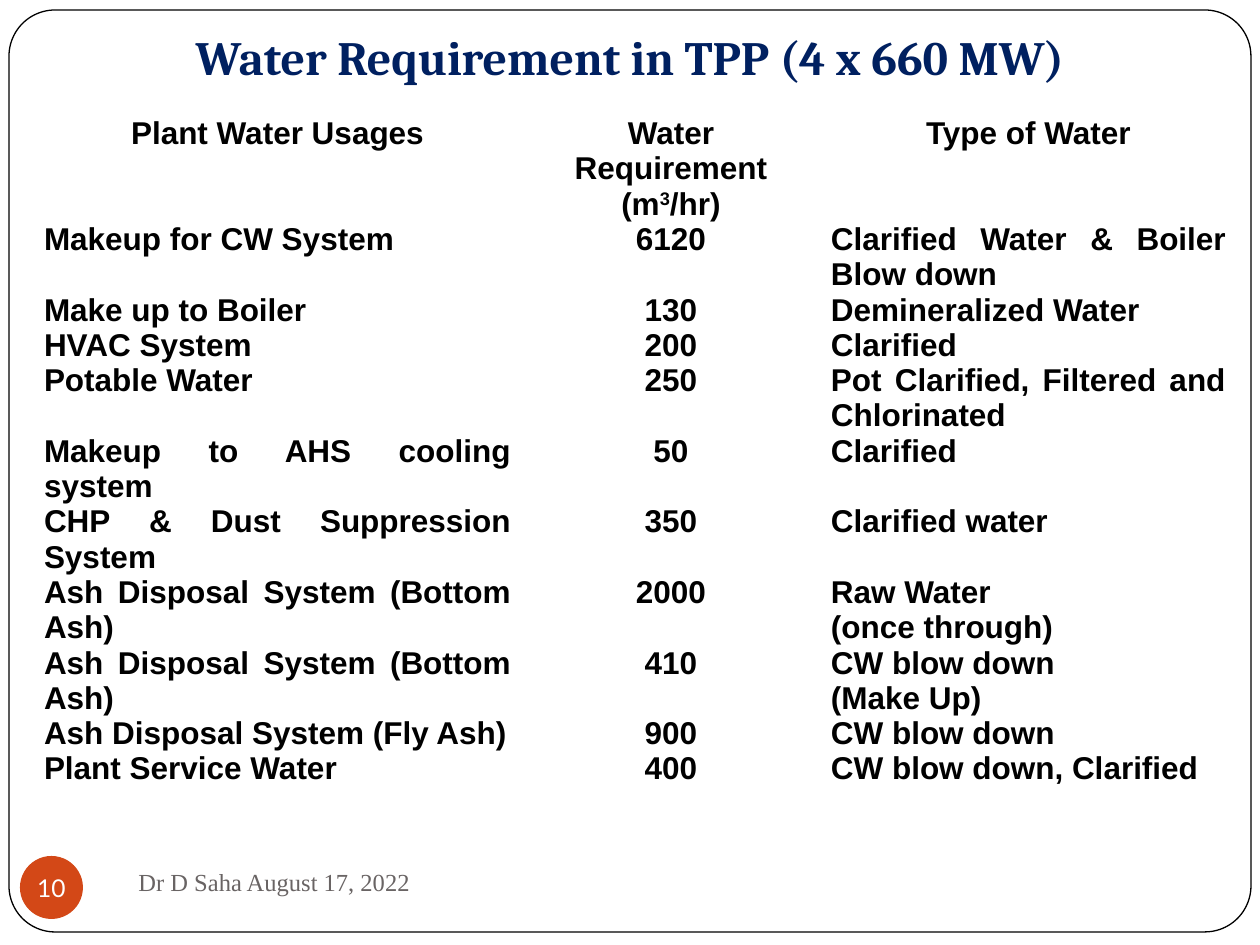
"""Builds the slide on water requirement in a thermal power plant."""
from pptx import Presentation
from pptx.dml.color import RGBColor
from pptx.enum.shapes import MSO_SHAPE
from pptx.enum.text import MSO_ANCHOR, PP_ALIGN
from pptx.util import Pt

PX = 914400 / 126
BLACK = RGBColor(0x00, 0x00, 0x00)
WHITE = RGBColor(0xFF, 0xFF, 0xFF)
NAVY = RGBColor(0x00, 0x20, 0x60)
ORANGE = RGBColor(0xD3, 0x48, 0x17)
GRAY = RGBColor(0x69, 0x64, 0x64)

TITLE = {"name": "Cambria", "size": Pt(27.3), "bold": True}
CELL = {"name": "Arial", "size": Pt(18), "bold": True}
NUMBER = {"name": "Lato", "size": Pt(14)}
FOOTER = {"name": "Times New Roman", "size": Pt(14)}

NO_STYLE = "{2D5ABB26-0587-4C30-8999-92F81FD0307C}"
COLUMNS = (485, 302, 413)
ROW_HEIGHT = 32
HEADER = ("Plant Water Usages", "Water Requirement (m^3^/hr)", "Type of Water")
USAGES = (
    ("Makeup for CW System", "6120", "Clarified Water & Boiler Blow down"),
    ("Make up to Boiler", "130", "Demineralized Water"),
    ("HVAC System", "200", "Clarified"),
    ("Potable Water", "250", "Pot Clarified, Filtered and Chlorinated"),
    ("Makeup to AHS cooling system ", "50", "Clarified"),
    ("CHP & Dust Suppression System", "350", "Clarified water"),
    ("Ash Disposal System (Bottom Ash)", "2000", "Raw Water \n(once through)"),
    ("Ash Disposal System (Bottom Ash)", "410", "CW blow down\n(Make Up)"),
    ("Ash Disposal System (Fly Ash)", "900", "CW blow down"),
    ("Plant Service Water ", "400", "CW blow down, Clarified"),
)


def px(*lengths):
    """Turn pixel lengths into EMU."""
    return [round(n * PX) for n in lengths]


def set_margins(target, x, y):
    """Set the side and the top and bottom margins in pixels."""
    target.margin_left = target.margin_right = px(x)[0]
    target.margin_top = target.margin_bottom = px(y)[0]


def write(tf, text, fmt, color, align):
    """Write one paragraph per line, raising what stands between carets."""
    for i, line in enumerate(text.split("\n")):
        p = tf.add_paragraph() if i else tf.paragraphs[0]
        p.alignment = align
        for j, part in enumerate(line.split("^")):
            r = p.add_run()
            r.text = part
            for key, value in fmt.items():
                setattr(r.font, key, value)
            r.font.color.rgb = color
            if j % 2:
                r.font._element.set("baseline", "30000")


def add_panel(s, kind, box, fill, line=None):
    """Add a filled preset shape with an optional outline."""
    sp = s.shapes.add_shape(kind, *px(*box))
    sp.shadow.inherit = False
    sp.fill.solid()
    sp.fill.fore_color.rgb = fill
    if line is None:
        sp.line.fill.background()
    else:
        sp.line.color.rgb = line
        sp.line.width = Pt(0.75)
    return sp


def add_text(s, box, text, fmt, color, align, anchor):
    """Add a wrapping text box."""
    tf = s.shapes.add_textbox(*px(*box)).text_frame
    tf.word_wrap = True
    tf.vertical_anchor = anchor
    write(tf, text, fmt, color, align)


def add_usage_table(s, left, top):
    """Add the table of water usages without fills or borders."""
    rows = (HEADER,) + USAGES
    size = (sum(COLUMNS), ROW_HEIGHT * len(rows))
    frame = s.shapes.add_table(len(rows), len(COLUMNS), *px(left, top, *size))
    table = frame.table
    table.first_row = table.horz_banding = False
    table._tbl.tblPr[0].text = NO_STYLE
    for column, width in zip(table.columns, px(*COLUMNS)):
        column.width = width
    for i, row in enumerate(rows):
        table.rows[i].height = px(ROW_HEIGHT)[0]
        for j, text in enumerate(row):
            cell = table.cell(i, j)
            cell.fill.background()
            set_margins(cell, 9, 0)
            centred = i == 0 or j == 1
            align = PP_ALIGN.CENTER if centred else PP_ALIGN.JUSTIFY
            write(cell.text_frame, text, CELL, BLACK, align)


def main():
    """Build and save the slide."""
    prs = Presentation()
    prs.slide_width, prs.slide_height = px(1260, 945)
    s = prs.slides.add_slide(prs.slide_layouts[6])

    border = add_panel(s, MSO_SHAPE.ROUNDED_RECTANGLE, (9, 10, 1242, 922), WHITE, BLACK)
    border.adjustments[0] = 0.05
    add_usage_table(s, 35, 116)

    badge = add_panel(s, MSO_SHAPE.OVAL, (20, 856, 63, 63), ORANGE)
    tf = badge.text_frame
    set_margins(tf, 0, 0)
    tf.vertical_anchor = MSO_ANCHOR.MIDDLE
    write(tf, "10", NUMBER, WHITE, PP_ALIGN.CENTER)

    add_text(s, (63, 22, 1134, 84), "Water Requirement in TPP (4 x 660 MW)",
             TITLE, NAVY, PP_ALIGN.CENTER, MSO_ANCHOR.TOP)
    add_text(s, (126, 850, 546, 63), "Dr D Saha August 17, 2022",
             FOOTER, GRAY, PP_ALIGN.LEFT, MSO_ANCHOR.MIDDLE)
    prs.save("out.pptx")


if __name__ == "__main__":
    main()
